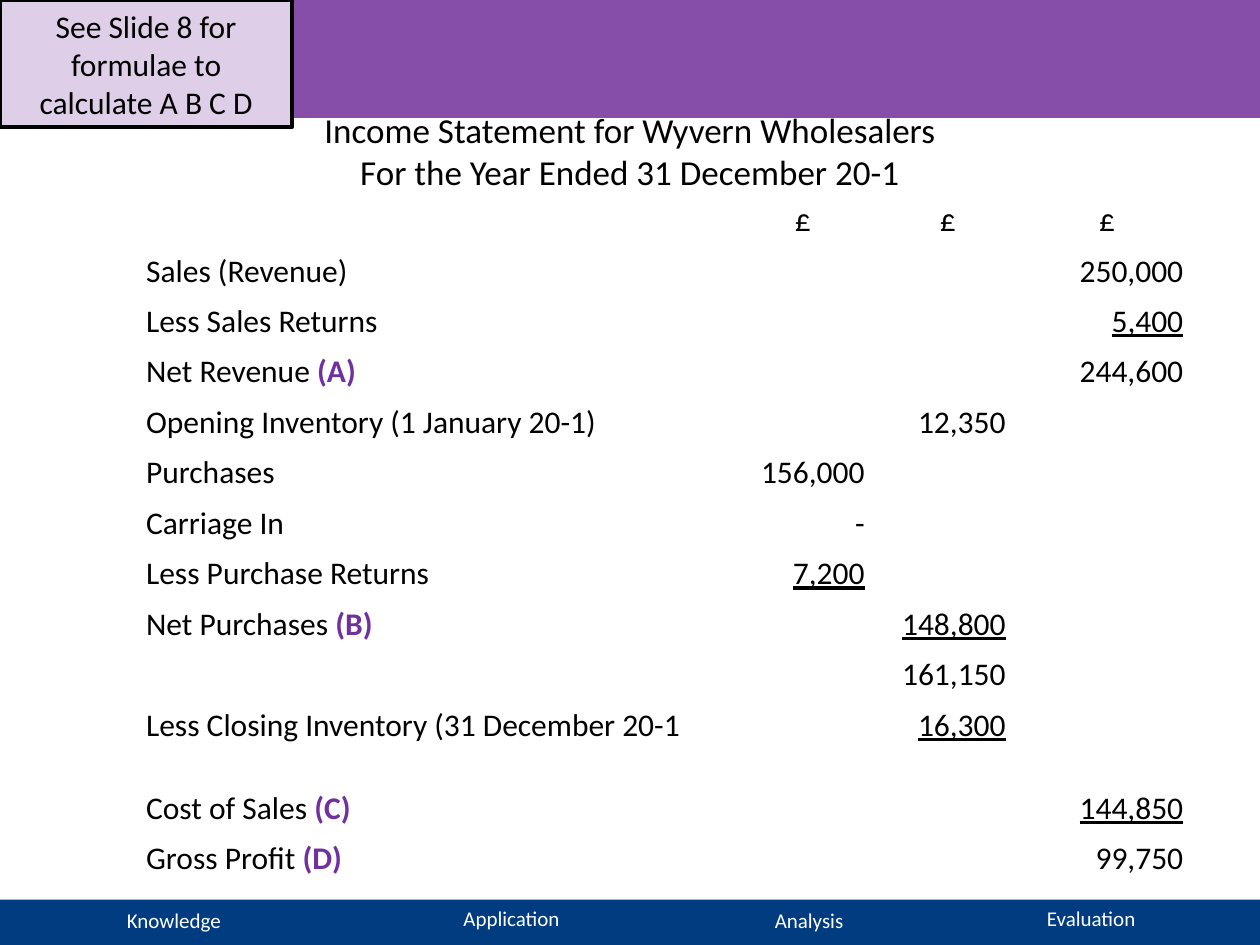
from typing import NamedTuple

from pptx import Presentation
from pptx.dml.color import RGBColor
from pptx.enum.shapes import MSO_SHAPE as SHAPE
from pptx.enum.text import MSO_ANCHOR as ANCHOR, PP_ALIGN as ALIGN
from pptx.util import Pt

BLACK, WHITE, ACCENT = "000000", "FFFFFF", "7030A0"
PURPLE, LILAC, NAVY = "874EA9", "DECEE8", "003C7F"


class Box(NamedTuple):
    left: float
    top: float
    width: float
    height: float

    def lengths(self) -> list:
        return [Pt(v) for v in self]


class Entry(NamedTuple):
    label: str
    amount: str
    column: int
    mark: str = ""
    underline: bool = False
    height: float = 27.4


class FooterLabel(NamedTuple):
    text: str
    left: float
    top: float


def color(value: str) -> RGBColor:
    return RGBColor.from_string(value)


def add_text(p, text: str, *, size=18, fill=BLACK, bold=False,
             underline=False, align=ALIGN.LEFT) -> None:
    p.alignment = align
    for i, line in enumerate(text.split("\n")):
        if i:
            p.add_line_break()
        r = p.add_run()
        r.text = line
        r.font.name, r.font.size = "Calibri", Pt(size)
        r.font.bold, r.font.underline = bold, underline
        r.font.color.rgb = color(fill)


def add_rect(s, box: Box, fill: str, line: str = ""):
    sp = s.shapes.add_shape(SHAPE.RECTANGLE, *box.lengths())
    sp.shadow.inherit = False
    sp.fill.solid()
    sp.fill.fore_color.rgb = color(fill)
    if line:
        sp.line.color.rgb = color(line)
        sp.line.width = Pt(2)
    else:
        sp.line.fill.background()
    return sp


def add_label(s, box: Box, text: str, anchor=ANCHOR.TOP, **fmt) -> None:
    tf = s.shapes.add_textbox(*box.lengths()).text_frame
    tf.word_wrap = True
    tf.vertical_anchor = anchor
    add_text(tf.paragraphs[0], text, align=ALIGN.CENTER, **fmt)


def add_statement(s, box: Box, widths: list[float], entries: list[Entry]) -> None:
    shape = s.shapes.add_table(len(entries) + 1, len(widths), *box.lengths())
    table = shape.table
    table.first_row = table.horz_banding = False
    for column, width in zip(table.columns, widths):
        column.width = Pt(width)
    for cell in table.iter_cells():
        cell.fill.background()

    # Currency headings
    table.rows[0].height = Pt(27.4)
    for c in range(1, len(widths)):
        add_text(table.cell(0, c).text_frame.paragraphs[0], "£", align=ALIGN.CENTER)

    # Account lines
    for i, e in enumerate(entries, start=1):
        table.rows[i].height = Pt(e.height)
        p = table.cell(i, 0).text_frame.paragraphs[0]
        if e.label:
            add_text(p, e.label)
        if e.mark:
            add_text(p, f" ({e.mark})", fill=ACCENT, bold=True)
        add_text(table.cell(i, e.column).text_frame.paragraphs[0], e.amount,
                 underline=e.underline, align=ALIGN.RIGHT)


ENTRIES = [
    Entry("Sales (Revenue)", "250,000", 3),
    Entry("Less Sales Returns", "5,400", 3, underline=True),
    Entry("Net Revenue", "244,600", 3, "A"),
    Entry("Opening Inventory (1 January 20-1)", "12,350", 2),
    Entry("Purchases", "156,000", 1),
    Entry("Carriage In", "-", 1),
    Entry("Less Purchase Returns", "7,200", 1, underline=True),
    Entry("Net Purchases", "148,800", 2, "B", underline=True),
    Entry("", "161,150", 2),
    Entry("Less Closing Inventory (31 December 20-1", "16,300", 2,
          underline=True, height=47.5),
    Entry("Cost of Sales", "144,850", 3, "C", underline=True),
    Entry("Gross Profit", "99,750", 3, "D"),
]

FOOTER = [
    FooterLabel("Knowledge", 2.9, 514.8),
    FooterLabel("Application", 195.8, 514.1),
    FooterLabel("Analysis", 365.8, 514.8),
    FooterLabel("Evaluation", 527, 514.1),
]


def main() -> None:
    prs = Presentation()
    prs.slide_width, prs.slide_height = Pt(720), Pt(540)
    s = prs.slides.add_slide(prs.slide_layouts[6])

    # Header and footer bands
    add_rect(s, Box(0, 0, 720, 66.2), PURPLE, line=PURPLE)
    add_rect(s, Box(0, 514, 720, 26), NAVY)
    for label in FOOTER:
        add_label(s, Box(label.left, label.top, 193, 21.6), label.text,
                  size=12, fill=WHITE)

    # Title and income statement
    add_label(s, Box(36, 60.5, 648, 51.1),
              "Income Statement for Wyvern Wholesalers\n"
              "For the Year Ended 31 December 20-1",
              anchor=ANCHOR.MIDDLE, size=20)
    add_statement(s, Box(76.3, 111.6, 607.7, 393.1),
                  [340, 85, 80.6, 101.5], ENTRIES)

    # Formula reminder
    note = add_rect(s, Box(0, 0, 167, 72.7), LILAC, line=BLACK)
    tf = note.text_frame
    tf.word_wrap = True
    tf.vertical_anchor = ANCHOR.MIDDLE
    add_text(tf.paragraphs[0], "See Slide 8 for formulae to calculate A B C D",
             align=ALIGN.CENTER)

    prs.save("out.pptx")


if __name__ == "__main__":
    main()
